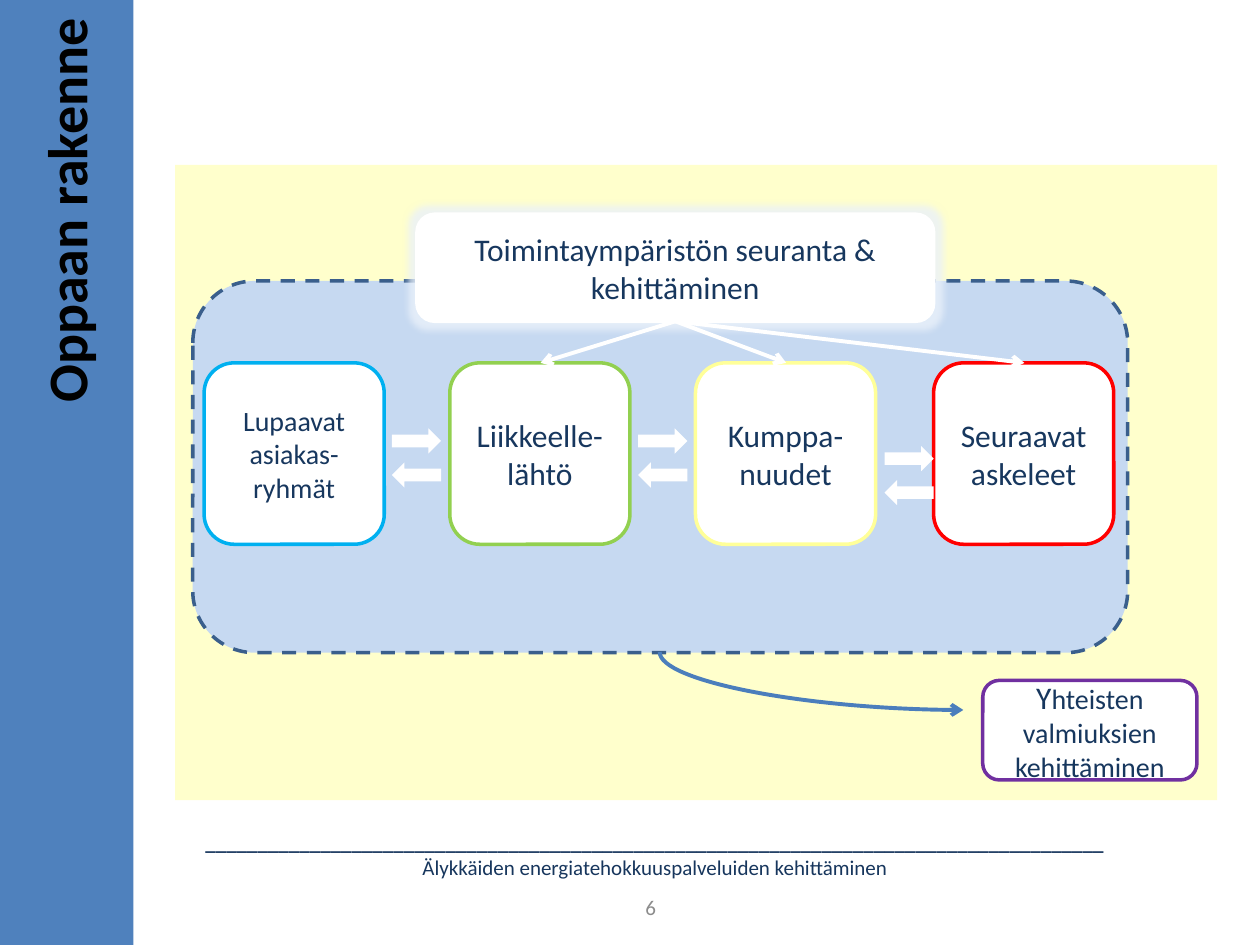
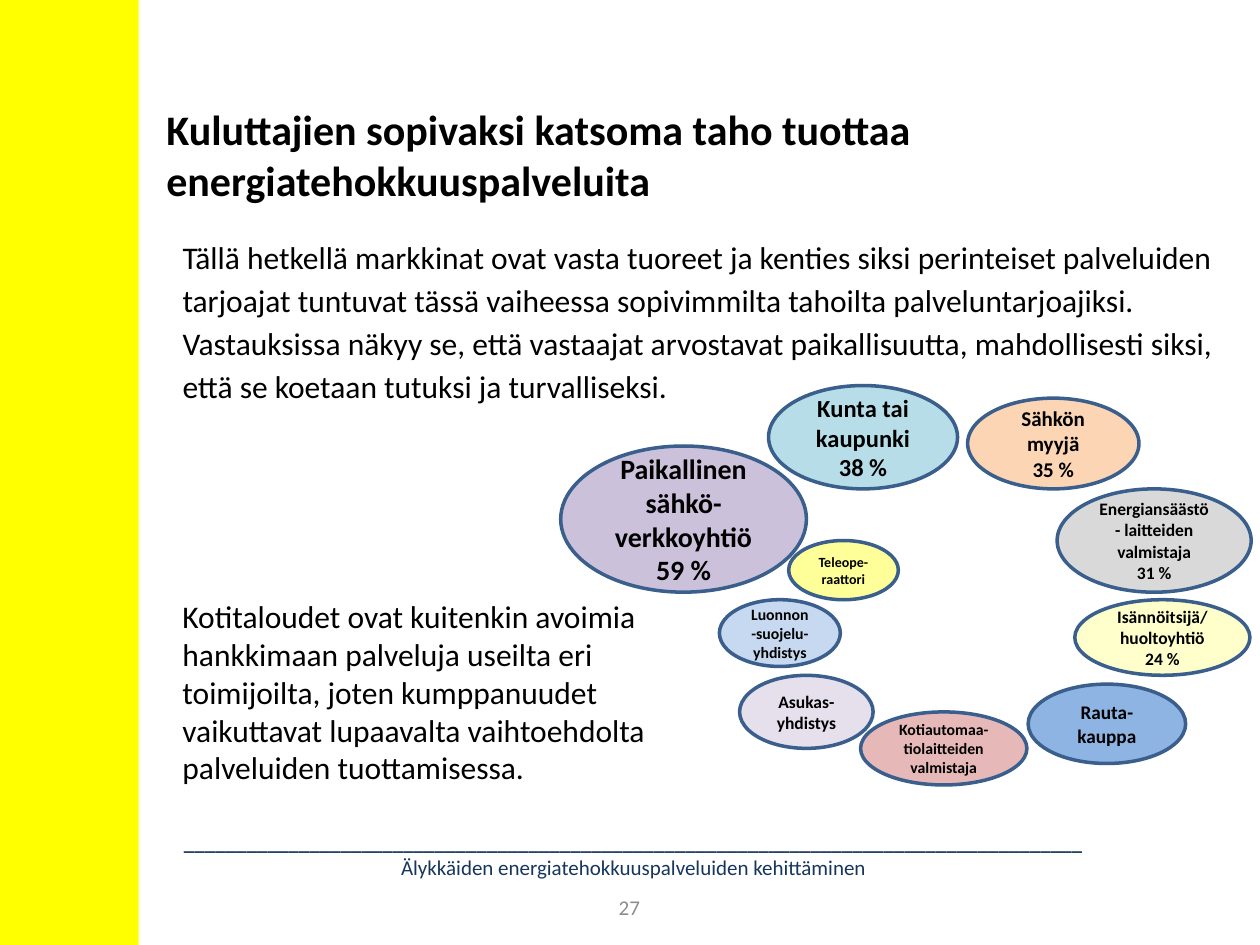
from pptx import Presentation
from pptx.dml.color import RGBColor
from pptx.enum.dml import MSO_LINE_DASH_STYLE as Dash
from pptx.enum.shapes import MSO_CONNECTOR as Connector, MSO_SHAPE as Shape
from pptx.enum.text import MSO_ANCHOR as Anchor, PP_ALIGN as Align
from pptx.oxml.ns import qn
from pptx.util import Inches, Pt
from lxml.etree import SubElement

FONT = "Calibri"
BLACK, WHITE, NAVY, GREY = "000000", "FFFFFF", "17375E", "8C8C8C"
BAND_BLUE, BAND_YELLOW = "4F81BD", "FFFF00"
OUTLINE, CURVE_BLUE = "3A5F8C", "4B7EBC"
PALE_BLUE, PALE_YELLOW, SOFT_YELLOW = "C6D9F1", "FFFFCC", "FFFF99"
GLOW = "EAF1FA"
FOOTER = "Älykkäiden energiatehokkuuspalveluiden kehittäminen"


def color(value):
    return RGBColor.from_string(value)


def style_run(run, size, font_color=BLACK, bold=False):
    run.font.name = FONT
    run.font.size = Pt(size)
    run.font.bold = bold
    run.font.color.rgb = color(font_color)


def write(shape, *texts, size=18, font_color=BLACK, bold=False,
          align=Align.LEFT, anchor=Anchor.MIDDLE, line_spacing=None):
    frame = shape.text_frame
    frame.word_wrap = True
    frame.vertical_anchor = anchor
    for index, text in enumerate(texts):
        paragraph = frame.add_paragraph() if index else frame.paragraphs[0]
        paragraph.text = text
        paragraph.alignment = align
        if line_spacing:
            paragraph.line_spacing = line_spacing
        for run in paragraph.runs:
            style_run(run, size, font_color, bold)


class Deck:
    """Hold the shared style and the current slide."""

    def __init__(self):
        self.presentation = Presentation()
        self.presentation.slide_width = Inches(10)
        self.presentation.slide_height = Inches(7.5)
        self.slide = None

    def add_slide(self):
        layout = self.presentation.slide_layouts[5]
        self.slide = self.presentation.slides.add_slide(layout)

    def title(self, text, place, rotation=0, **text_format):
        title = self.slide.shapes.title
        title.left, title.top, title.width, title.height = map(Inches, place)
        title.rotation = rotation
        write(title, text, bold=True, **text_format)
        title.element.getparent().append(title.element)

    def shape(self, kind, place, fill, line=None, dash=None):
        shape = self.slide.shapes.add_shape(kind, *map(Inches, place))
        shape.shadow.inherit = False
        shape.fill.solid()
        shape.fill.fore_color.rgb = color(fill)
        if line:
            shape.line.color.rgb = color(line)
            shape.line.width = Pt(2)
            shape.line.dash_style = dash
        else:
            shape.line.fill.background()
        return shape

    def card(self, place, line, text, size=18):
        card = self.shape(Shape.ROUNDED_RECTANGLE, place, WHITE, line)
        write(card, text, size=size, font_color=NAVY, align=Align.CENTER)
        return card

    def bubble(self, place, fill, size, *texts):
        bubble = self.shape(Shape.OVAL, place, fill, OUTLINE)
        write(bubble, *texts, size=size, bold=True, align=Align.CENTER)

    def text(self, place, *texts, **text_format):
        box = self.slide.shapes.add_textbox(*map(Inches, place))
        write(box, *texts, **text_format)
        return box

    def arrow(self, start, end, line, kind=Connector.STRAIGHT):
        arrow = self.slide.shapes.add_connector(kind, *map(Inches, start + end))
        arrow.line.color.rgb = color(line)
        arrow.line.width = Pt(2.25)
        SubElement(arrow.line._get_or_add_ln(), qn("a:tailEnd"), type="arrow")
        SubElement(arrow.element.spPr, qn("a:effectLst"))
        return arrow

    def quarter_curve(self, start, end, line):
        curve = self.arrow(start, end, line, Connector.CURVE)
        properties = curve.element.spPr
        properties.find(qn("a:prstGeom")).set("prst", "curvedConnector2")
        properties.find(qn("a:xfrm")).set("rot", "16200000")

    def glow(self, shape, glow_color):
        effects = shape.element.spPr.find(qn("a:effectLst"))
        glow = SubElement(effects, qn("a:glow"), rad=str(Inches(0.11)))
        tint = SubElement(glow, qn("a:srgbClr"), val=glow_color)
        SubElement(tint, qn("a:alpha"), val="80000")

    def footer(self, left, number_left, number):
        footer = self.text((left, 6.11, 10, 1.34), "_" * 86, FOOTER, size=12,
                           font_color="17365D", align=Align.CENTER)
        footer.text_frame.paragraphs[0].runs[0].font.bold = True
        self.text((number_left, 7, 2.33, 0.4), str(number), size=12,
                  font_color=GREY, align=Align.CENTER)


def build_structure(deck):
    deck.add_slide()
    deck.shape(Shape.RECTANGLE, (0, 0, 1.06, 7.5), BAND_BLUE)
    deck.footer(0.2, 4, 6)
    deck.shape(Shape.RECTANGLE, (1.39, 1.31, 8.27, 5.04), PALE_YELLOW)
    deck.shape(Shape.ROUNDED_RECTANGLE, (1.53, 2.23, 7.42, 2.95), PALE_BLUE,
               OUTLINE, Dash.DASH)

    stages = [
        (1.62, "00B0F0", "Lupaavat asiakas-ryhmät", 16),
        (3.57, "92D050", "Liikkeelle-lähtö", 18),
        (5.52, SOFT_YELLOW, "Kumppa-nuudet", 18),
        (7.41, "FF0000", "Seuraavat\vaskeleet", 18),
    ]
    for left, line, text, size in stages:
        deck.card((left, 2.88, 1.43, 1.44), line, text, size)

    for index, top in enumerate((3.4, 3.4, 3.54)):
        left = 3.11 + 1.955 * index
        deck.shape(Shape.RIGHT_ARROW, (left, top, 0.39, 0.2), WHITE)
        deck.shape(Shape.LEFT_ARROW, (left, top + 0.27, 0.39, 0.2), WHITE)

    monitoring = deck.card((3.31, 1.7, 4.1, 0.85), WHITE,
                           "Toimintaympäristön seuranta & kehittäminen")
    deck.glow(monitoring, GLOW)
    for left, *_ in stages[1:]:
        deck.arrow((5.36, 2.55), (left + 0.72, 2.88), WHITE)

    deck.quarter_curve((6.67, 4.2), (6.21, 6.61), CURVE_BLUE)
    skills = deck.card((7.8, 5.4, 1.7, 0.79), "7030A0", "Y")
    ending = skills.text_frame.paragraphs[0].add_run()
    ending.text = "hteisten valmiuksien kehittäminen"
    style_run(ending, 16, NAVY)

    deck.title("Oppaan rakenne", (-3.21, 3.22, 7.45, 1.1), rotation=270,
               size=32, align=Align.RIGHT)


def build_providers(deck):
    deck.add_slide()
    deck.shape(Shape.RECTANGLE, (-0.04, 0, 1.14, 7.53), BAND_YELLOW)
    deck.title("Kuluttajien sopivaksi katsoma taho tuottaa "
               "energiatehokkuuspalveluita", (1.22, 0.6, 7.9, 1.25), size=24)
    deck.footer(0.03, 3.83, 27)

    providers = [
        ((4.45, 3.54, 1.95, 1.16), "CCC1DA", 16,
         "Paikallinen sähkö-verkkoyhtiö", "59 %"),
        ((6.1, 3.06, 1.5, 0.82), "B7DEE8", 14, "Kunta tai kaupunki", "38 %"),
        ((7.68, 3.16, 1.36, 0.72), "FCD5B5", 12, "Sähkön myyjä", "35 %"),
        ((8.39, 3.88, 1.54, 0.82), "D9D9D9", 10,
         "Energiansäästö- laitteiden valmistaja", "31 %"),
        ((8.53, 4.76, 1.39, 0.6), PALE_YELLOW, 10,
         "Isännöitsijä/huoltoyhtiö", "24 %"),
        ((8.16, 5.43, 1.25, 0.63), "8EB4E3", 11, "Rauta-kauppa"),
        ((6.83, 5.65, 1.32, 0.58), "E6B9B8", 9,
         "Kotiautomaa-tiolaitteiden valmistaja"),
        ((5.87, 5.36, 1.06, 0.58), "E6E0EC", 10, "Asukas-yhdistys"),
        ((5.71, 4.76, 0.96, 0.53), PALE_BLUE, 9, "Luonnon-suojelu-yhdistys"),
        ((6.26, 4.29, 0.87, 0.47), SOFT_YELLOW, 8, "Teleope-raattori"),
    ]
    for provider in providers:
        deck.bubble(*provider)

    deck.text((1.35, 1.8, 8.65, 1.48),
              "Tällä hetkellä markkinat ovat vasta tuoreet ja kenties siksi "
              "perinteiset palveluiden tarjoajat tuntuvat tässä vaiheessa "
              "sopivimmilta tahoilta palveluntarjoajiksi. Vastauksissa näkyy "
              "se, että vastaajat arvostavat paikallisuutta, mahdollisesti "
              "siksi, että se koetaan tutuksi ja turvalliseksi.",
              anchor=Anchor.TOP, line_spacing=1.14)
    deck.text((1.35, 4.69, 4.2, 1.62),
              "Kotitaloudet ovat kuitenkin avoimia hankkimaan palveluja "
              "useilta eri toimijoilta, joten kumppanuudet vaikuttavat "
              "lupaavalta vaihtoehdolta palveluiden tuottamisessa.",
              anchor=Anchor.TOP)


def main():
    deck = Deck()
    build_structure(deck)
    build_providers(deck)
    deck.presentation.save("out.pptx")


if __name__ == "__main__":
    main()
